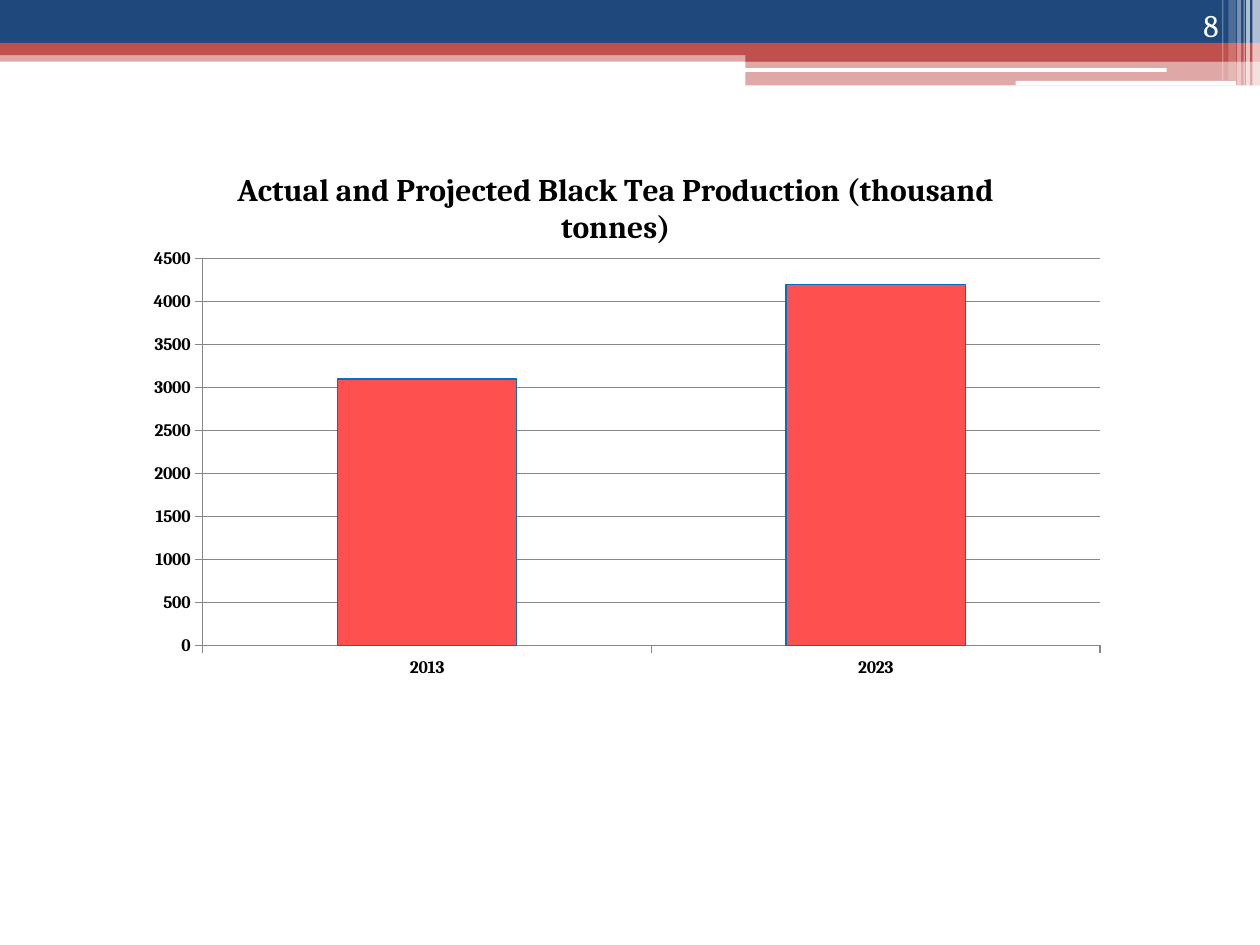
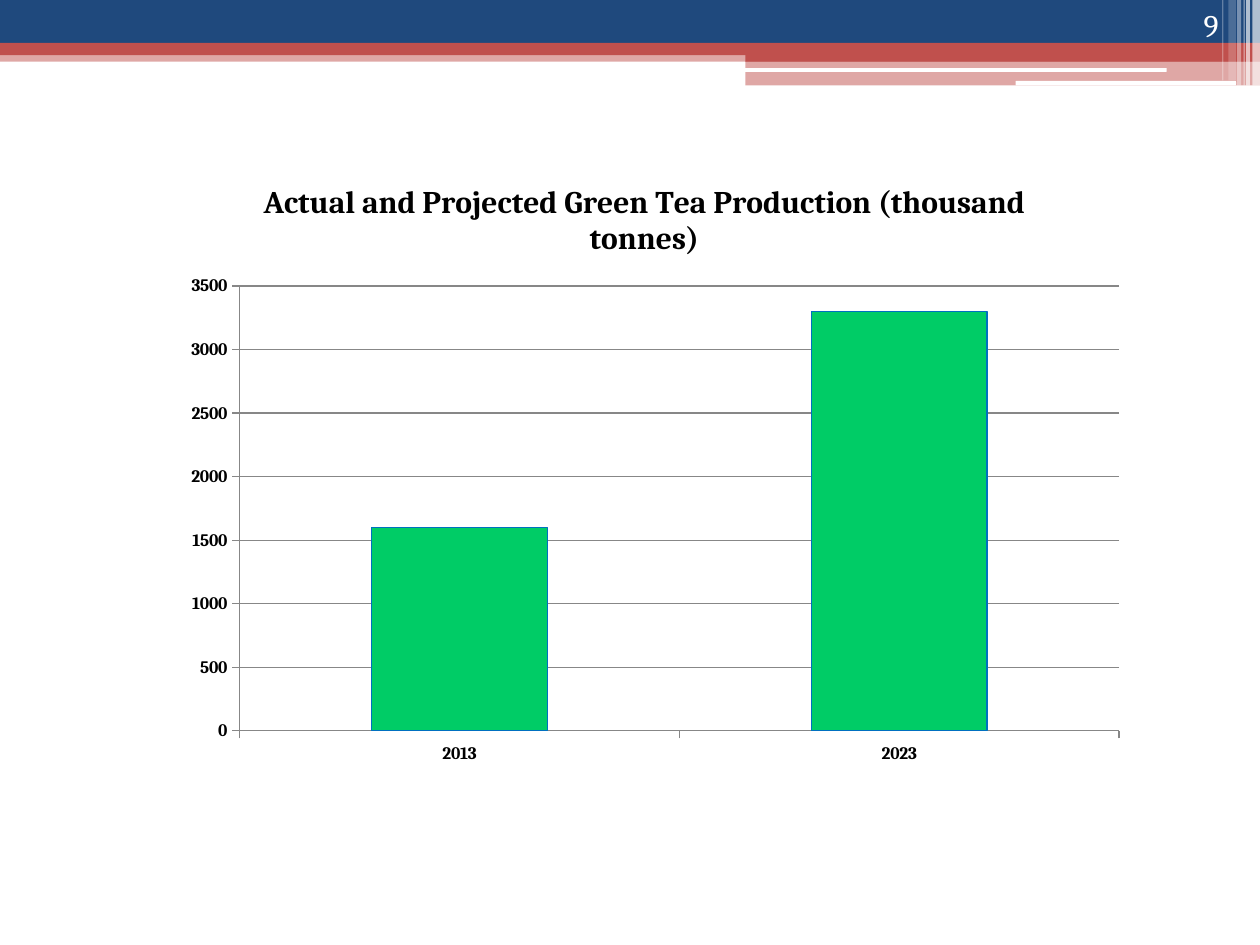
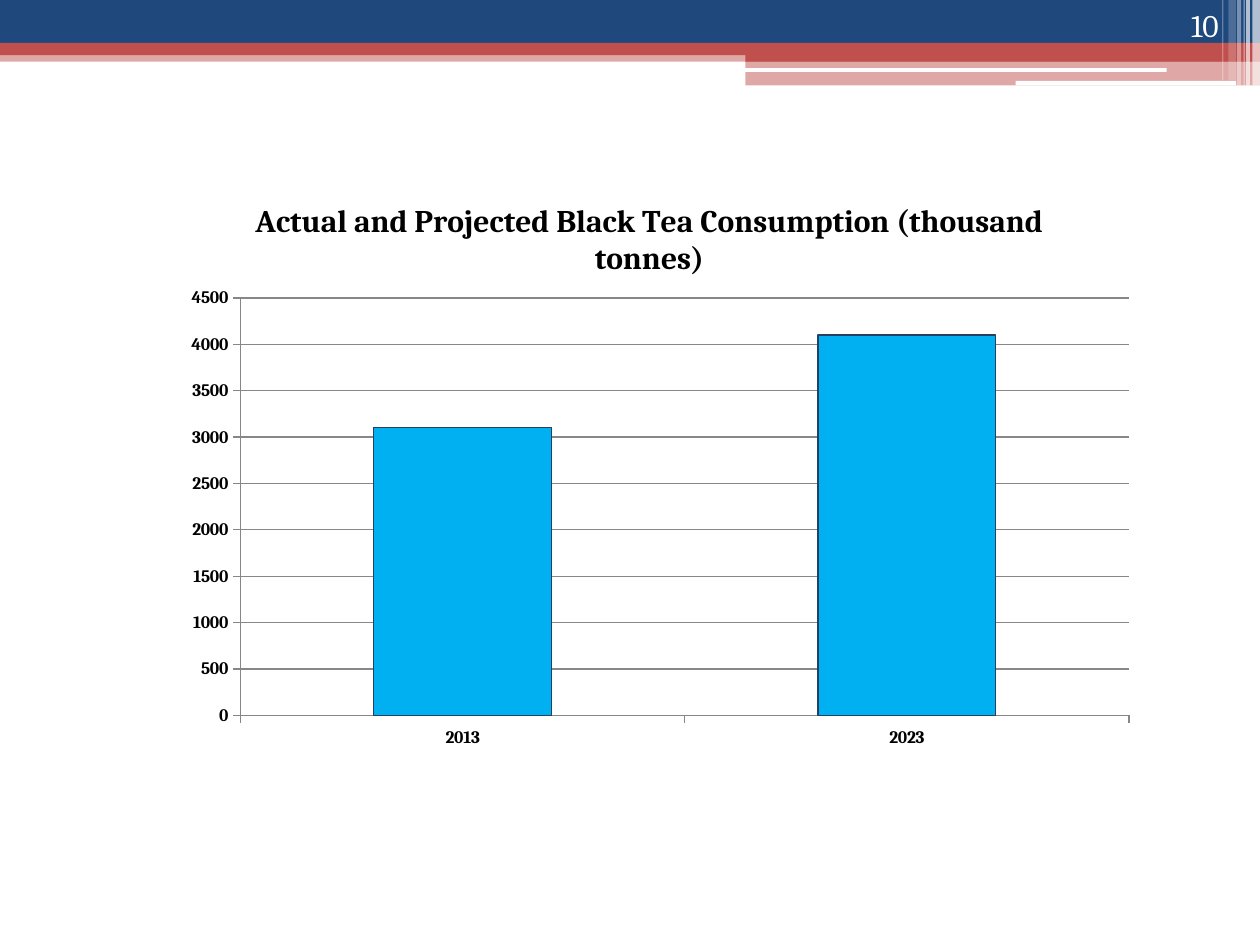
from lxml import etree
from pptx import Presentation
from pptx.chart.data import CategoryChartData
from pptx.dml.color import RGBColor
from pptx.enum.chart import XL_CHART_TYPE, XL_TICK_MARK
from pptx.enum.shapes import MSO_SHAPE
from pptx.enum.text import MSO_ANCHOR, PP_ALIGN
from pptx.oxml.ns import qn
from pptx.util import Pt

RECT, ROUNDED = MSO_SHAPE.RECTANGLE, MSO_SHAPE.ROUNDED_RECTANGLE
STACKED = XL_CHART_TYPE.COLUMN_STACKED
TICK_OUT, TICK_NONE = XL_TICK_MARK.OUTSIDE, XL_TICK_MARK.NONE
BOTTOM, RIGHT = MSO_ANCHOR.BOTTOM, PP_ALIGN.RIGHT
BLANK_LAYOUT = 6

THEME = {
    "font": "Cambria",
    "navy": RGBColor.from_string("1F497D"),
    "red": RGBColor.from_string("C0504D"),
    "white": RGBColor.from_string("FFFFFF"),
    "black": RGBColor.from_string("000000"),
    "axis": RGBColor.from_string("878787"),
    "title_size": Pt(18),
    "number_size": Pt(18),
    "axis_size": Pt(10),
    "hairline": Pt(0.75),
}

# Header: preset, left, top, width, height, colour, opacity in percent
HEADER_BANDS = [
    (RECT, 0, 28.8, 720, 6.5, "red", 50),
    (RECT, 0, 0, 720, 24.5, "navy", 100),
    (RECT, 0, 24.5, 720, 7, "red", 100),
    (RECT, 426, 28, 294, 7.2, "red", 100),
    (RECT, 426, 34.8, 294, 14, "red", 50),
    (ROUNDED, 425.5, 38.9, 241.2, 2.2, "white", 100),
    (ROUNDED, 580.3, 46.2, 126, 2.6, "white", 100),
    (RECT, 715.7, 0, 4.3, 49, "white", 65),
    (RECT, 712.1, 0, 2.2, 49, "white", 65),
    (RECT, 710.6, 0, 0.7, 49, "white", 60),
    (RECT, 707, 0, 2.2, 49, "white", 40),
    (RECT, 702, 0, 4.3, 46, "white", 20),
    (RECT, 698.4, 0, 0.7, 46, "white", 30),
]

YEARS = ["2013", "2023"]
PLOT_AREA = {"x": 0.096, "y": 0.2, "w": 0.878, "h": 0.679}
TEA_CHARTS = [
    {"subject": "Black Tea Production", "tonnes": (3100, 4200), "top_value": 4500,
     "fill": "FF5050", "outline": "0070C0", "frame": (59.8, 82.8, 584, 325.4)},
    {"subject": "Green Tea Production", "tonnes": (1600, 3300), "top_value": 3500,
     "fill": "00CC66", "outline": "0070C0", "frame": (82, 88.6, 572.4, 374.4)},
    {"subject": "Black Tea Consumption", "tonnes": (3100, 4100), "top_value": 4500,
     "fill": "00B0F0", "outline": "254061", "frame": (82, 100, 578.2, 351.4)},
]
FIRST_NUMBER = 8


def apply_format(target, values):
    for name, value in values.items():
        setattr(target, name, value)


def add_child(parent, tag, value):
    etree.SubElement(parent, qn(tag)).set("val", str(value))


prs = Presentation()
apply_format(prs, {"slide_width": Pt(720), "slide_height": Pt(540)})
layout = prs.slide_layouts[BLANK_LAYOUT]
for placeholder in list(layout.placeholders):
    placeholder.element.getparent().remove(placeholder.element)
slides = [prs.slides.add_slide(layout) for _ in TEA_CHARTS]

# The header is drawn once and moved to the layout that all slides share
header = []
for preset, left, top, width, height, colour, opacity in HEADER_BANDS:
    band = slides[0].shapes.add_shape(preset, Pt(left), Pt(top), Pt(width), Pt(height))
    band.shadow.inherit = False
    band.line.fill.background()
    band.fill.solid()
    band.fill.fore_color.rgb = THEME[colour]
    if opacity < 100:
        add_child(band.element.spPr.find(".//" + qn("a:srgbClr")), "a:alpha", opacity * 1000)
    header.append(band.element)
layout.element.cSld.spTree.extend(header)

for number, (slide, tea) in enumerate(zip(slides, TEA_CHARTS), FIRST_NUMBER):
    page_number = slide.shapes.add_textbox(Pt(643.7), Pt(0), Pt(59.8), Pt(28.8)).text_frame
    apply_format(page_number, {"word_wrap": True, "vertical_anchor": BOTTOM})
    paragraph = page_number.paragraphs[0]
    paragraph.alignment = RIGHT
    digits = paragraph.add_run()
    digits.text = str(number)
    apply_format(digits.font, {"name": THEME["font"], "size": THEME["number_size"]})
    digits.font.color.rgb = THEME["white"]

    production = CategoryChartData()
    production.categories = YEARS
    production.add_series("Series 1", tea["tonnes"])
    frame = [Pt(length) for length in tea["frame"]]
    chart = slide.shapes.add_chart(STACKED, *frame, production).chart
    apply_format(chart, {"has_legend": False, "has_title": True})
    apply_format(chart.font, {"name": THEME["font"], "size": THEME["axis_size"]})
    chart.font.color.rgb = THEME["black"]

    heading = chart.chart_title.text_frame.paragraphs[0].add_run()
    heading.text = f"Actual and Projected {tea['subject']} (thousand tonnes)"
    apply_format(heading.font, {"name": THEME["font"], "size": THEME["title_size"], "bold": True})
    heading.font.color.rgb = THEME["black"]
    for overlay in chart.element.iterfind(".//" + qn("c:title") + "/" + qn("c:overlay")):
        overlay.set("val", "1")

    apply_format(chart.value_axis, {"minimum_scale": 0, "maximum_scale": tea["top_value"],
                                    "major_unit": 500, "has_major_gridlines": True})
    chart.category_axis.has_major_gridlines = False
    for axis in (chart.category_axis, chart.value_axis):
        apply_format(axis, {"major_tick_mark": TICK_OUT, "minor_tick_mark": TICK_NONE})
        apply_format(axis.tick_labels.font, {"name": THEME["font"], "size": THEME["axis_size"],
                                             "bold": True})
        axis.tick_labels.font.color.rgb = THEME["black"]
    for ruled in (chart.category_axis, chart.value_axis, chart.value_axis.major_gridlines):
        ruled.format.line.width = THEME["hairline"]
        ruled.format.line.color.rgb = THEME["axis"]

    plot = chart.plots[0]
    apply_format(plot, {"gap_width": 150, "overlap": 100, "vary_by_categories": False})
    columns = plot.series[0].format
    columns.fill.solid()
    columns.fill.fore_color.rgb = RGBColor.from_string(tea["fill"])
    columns.line.width = THEME["hairline"]
    columns.line.color.rgb = RGBColor.from_string(tea["outline"])

    plot_area = chart.element.find(".//" + qn("c:plotArea"))
    for automatic in plot_area.findall(qn("c:layout")):
        plot_area.remove(automatic)
    placement = etree.Element(qn("c:layout"))
    manual = etree.SubElement(placement, qn("c:manualLayout"))
    add_child(manual, "c:layoutTarget", "inner")
    for side in ("x", "y"):
        add_child(manual, f"c:{side}Mode", "edge")
    for side, share in PLOT_AREA.items():
        add_child(manual, f"c:{side}", share)
    plot_area.insert(0, placement)

prs.save("out.pptx")
